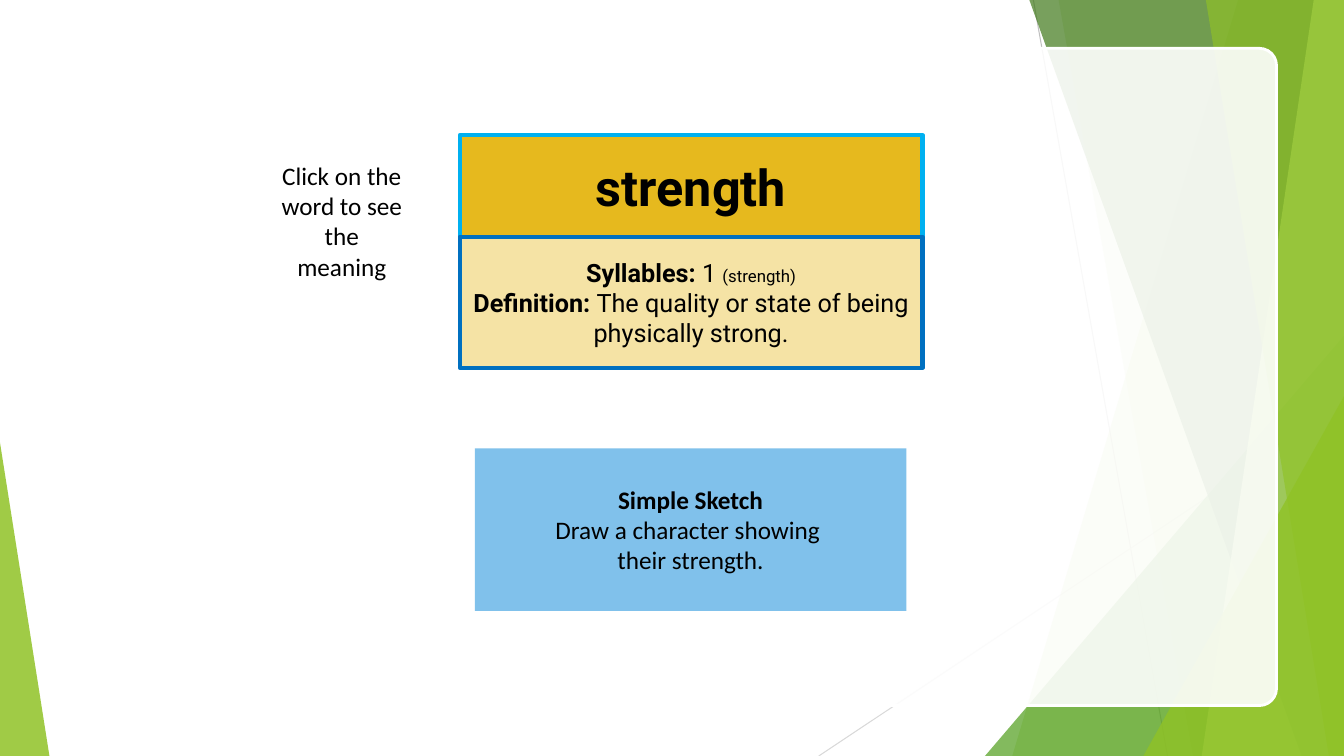
from lxml import etree
from pptx import Presentation
from pptx.dml.color import RGBColor
from pptx.enum.shapes import MSO_CONNECTOR, MSO_SHAPE
from pptx.enum.text import MSO_ANCHOR, MSO_AUTO_SIZE, PP_ALIGN
from pptx.oxml.ns import qn
from pptx.util import Inches, Pt

STRAIGHT = MSO_CONNECTOR.STRAIGHT
RECTANGLE = MSO_SHAPE.RECTANGLE
ROUNDED = MSO_SHAPE.ROUNDED_RECTANGLE
TRIANGLE = MSO_SHAPE.ISOSCELES_TRIANGLE
MIDDLE, TOP = MSO_ANCHOR.MIDDLE, MSO_ANCHOR.TOP
NO_FIT, GROW = MSO_AUTO_SIZE.NONE, MSO_AUTO_SIZE.SHAPE_TO_FIT_TEXT
CENTER = PP_ALIGN.CENTER

WIDTH, HEIGHT = Inches(13.33), Inches(7.5)
TITLE_ONLY = 5

BLACK = RGBColor(0x00, 0x00, 0x00)
WHITE = RGBColor(0xFF, 0xFF, 0xFF)
GREY = RGBColor(0xBF, 0xBF, 0xBF)
LIGHT_GREY = RGBColor(0xD9, 0xD9, 0xD9)
GREEN = RGBColor(0x90, 0xC2, 0x26)
MID_GREEN = RGBColor(0x54, 0xA0, 0x21)
DARK_GREEN = RGBColor(0x3F, 0x78, 0x19)
PALE_GREEN = RGBColor(0xC0, 0xE4, 0x74)
GOLD = RGBColor(0xE6, 0xB9, 0x1E)
CREAM = RGBColor(0xF5, 0xE3, 0xA5)
SKY = RGBColor(0x80, 0xC1, 0xEB)
CYAN = RGBColor(0x00, 0xB0, 0xF0)
BLUE = RGBColor(0x00, 0x70, 0xC0)


def across(percent):
    return round(WIDTH * percent / 100)


def down(percent):
    return round(HEIGHT * percent / 100)


def area(left, top, width, height):
    return across(left), down(top), across(width), down(height)


def paint(shape, fill, opacity=100, line=None, weight=0):
    shape.fill.solid()
    shape.fill.fore_color.rgb = fill
    if opacity < 100:
        color = shape.element.spPr.find(qn("a:solidFill")).find(qn("a:srgbClr"))
        etree.SubElement(color, qn("a:alpha")).set("val", str(opacity * 1000))
    if line is None:
        shape.line.fill.background()
    else:
        shape.line.color.rgb = line
        shape.line.width = Pt(weight)


def add_hairline(page, start, end, color):
    line = page.shapes.add_connector(
        STRAIGHT, across(start[0]), down(start[1]), across(end[0]), down(end[1]))
    line.line.color.rgb = color
    line.line.width = Pt(0.75)
    etree.SubElement(line.element.spPr, qn("a:effectLst"))


def add_band(page, top, bottom, color, opacity):
    builder = page.shapes.build_freeform(across(top), 0)
    builder.add_line_segments([(WIDTH, 0), (WIDTH, HEIGHT), (across(bottom), HEIGHT)])
    band = builder.convert_to_shape()
    band.shadow.inherit = False
    paint(band, color, opacity)


def add_block(page, kind, place, fill, adjust=None, **look):
    block = page.shapes.add_shape(kind, *area(*place))
    block.shadow.inherit = False
    if adjust is not None:
        block.adjustments[0] = adjust
    paint(block, fill, **look)
    return block


def add_corner(page, left, top, width, tip, color, opacity):
    add_block(page, TRIANGLE, (left, top, width, 100 - top), color, tip, opacity=opacity)


def write(box, *lines, font="Calibri", size=18, anchor=MIDDLE, fit=NO_FIT):
    frame = box.text_frame
    frame.word_wrap = True
    frame.auto_size = fit
    frame.vertical_anchor = anchor
    for index, spans in enumerate(lines):
        para = frame.add_paragraph() if index else frame.paragraphs[0]
        para.alignment = CENTER
        for text, bold, *own_size in spans:
            for part, piece in enumerate(text.split("\n")):
                if part:
                    para.add_line_break()
                span = para.add_run()
                span.text = piece
                span.font.name = font
                span.font.size = Pt(own_size[0] if own_size else size)
                span.font.bold = bold
                span.font.color.rgb = BLACK


def add_backdrop(page):
    add_hairline(page, (76.89, 0), (86.87, 100), GREY)
    add_hairline(page, (100, 53.73), (60.92, 100), LIGHT_GREY)
    add_band(page, 92.12, 75.32, GREEN, 30)
    add_band(page, 78.77, 88.75, GREEN, 20)
    add_corner(page, 73.29, 44.4, 26.71, 1, MID_GREEN, 72)
    add_band(page, 76.59, 96.85, DARK_GREEN, 70)
    add_band(page, 97.75, 89.42, PALE_GREEN, 70)
    add_band(page, 89.72, 98.87, GREEN, 65)
    add_corner(page, 85.07, 52.4, 14.93, 1, GREEN, 80)
    add_corner(page, 0, 58.53, 3.68, 0, GREEN, 85)
    add_block(page, ROUNDED, (5.03, 6.4, 89.95, 86.93), WHITE, 0.026,
              opacity=90, line=WHITE, weight=2)


def add_word(page, text):
    word = page.shapes.title
    word.element.getparent().append(word.element)
    word.left, word.top, word.width, word.height = area(34.21, 17.87, 34.43, 13.47)
    paint(word, GOLD, line=CYAN, weight=3)
    write(word, [(text, True)], font="Roboto", size=36)


def main():
    deck = Presentation()
    deck.slide_width, deck.slide_height = WIDTH, HEIGHT
    page = deck.slides.add_slide(deck.slide_layouts[TITLE_ONLY])
    add_backdrop(page)

    hint = page.shapes.add_textbox(*area(20.03, 20.53, 10.8, 17.47))
    write(hint, [("Click on the word to see the meaning", False)], anchor=TOP, fit=GROW)

    add_word(page, "strength")

    meaning = add_block(page, RECTANGLE, (34.21, 31.33, 34.43, 17.33), CREAM,
                        line=BLUE, weight=3)
    write(meaning,
          [("Syllables: ", True), ("1 ", False), ("(strength)", False, 12)],
          [("Definition: ", True),
           ("The quality or state of being physically strong.", False)],
          font="Roboto")

    sketch = add_block(page, RECTANGLE, (35.33, 59.33, 32.11, 21.47), SKY)
    write(sketch,
          [("Simple Sketch", True)],
          [("Draw a character showing \ntheir strength.", False)])

    deck.save("out.pptx")


if __name__ == "__main__":
    main()
